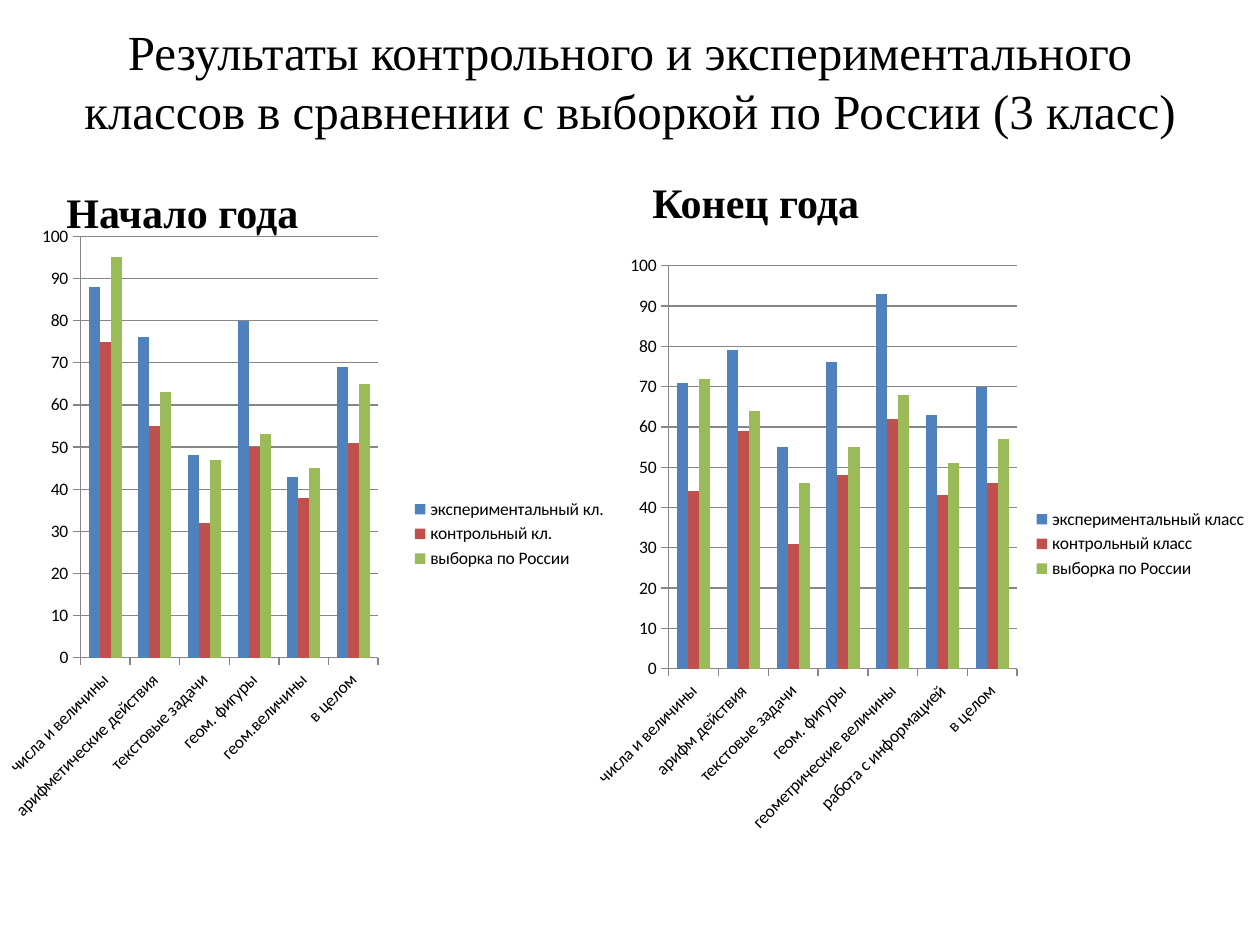
from dataclasses import dataclass

from lxml import etree
from pptx import Presentation
from pptx.chart.data import CategoryChartData
from pptx.dml.color import RGBColor
from pptx.enum.chart import XL_CHART_TYPE, XL_LEGEND_POSITION, XL_TICK_MARK
from pptx.enum.text import MSO_ANCHOR, PP_ALIGN
from pptx.oxml.ns import qn
from pptx.util import Emu, Pt

COLUMNS = XL_CHART_TYPE.COLUMN_CLUSTERED
RIGHT = XL_LEGEND_POSITION.RIGHT
OUTSIDE = XL_TICK_MARK.OUTSIDE
TOP, BOTTOM = MSO_ANCHOR.TOP, MSO_ANCHOR.BOTTOM
LEFT, CENTER = PP_ALIGN.LEFT, PP_ALIGN.CENTER
EMU_PER_PX = 914400 // 126


@dataclass(frozen=True)
class Theme:
    text: str = "000000"
    axis: str = "868686"
    series: tuple = ("4F81BD", "C0504D", "9BBB59")
    text_font: str = "Times New Roman"
    chart_font: str = "Calibri"
    title_size: int = 28
    heading_size: int = 24
    chart_size: int = 10


THEME = Theme()

START_CATEGORIES = ("числа и величины", "арифметические действия", "текстовые задачи",
                    "геом. фигуры", "геом.величины", "в целом")
START_SERIES = {
    "экспериментальный кл.": (88, 76, 48, 80, 43, 69),
    "контрольный кл.": (75, 55, 32, 50, 38, 51),
    "выборка по России": (95, 63, 47, 53, 45, 65),
}
END_CATEGORIES = ("числа и величины", "арифм действия", "текстовые задачи", "геом. фигуры",
                  "геометрические величины", "работа с информацией", "в целом")
END_SERIES = {
    "экспериментальный класс": (71, 79, 55, 76, 93, 63, 70),
    "контрольный класс": (44, 59, 31, 48, 62, 43, 46),
    "выборка по России": (72, 64, 46, 55, 68, 51, 57),
}


def px(*lengths):
    return [Emu(length * EMU_PER_PX) for length in lengths]


def color(value):
    return RGBColor.from_string(value)


def add_text(slide, box, text, *, size, bold=False, align=LEFT, anchor=BOTTOM):
    frame = slide.shapes.add_textbox(*px(*box)).text_frame
    frame.word_wrap = True
    frame.vertical_anchor = anchor
    paragraph = frame.paragraphs[0]
    paragraph.alignment = align
    run = paragraph.add_run()
    run.text = text
    run.font.name = THEME.text_font
    run.font.size = Pt(size)
    run.font.bold = bold
    run.font.color.rgb = color(THEME.text)


def set_plot_layout(chart, x, y, width, height):
    plot_area = chart.plots[0]._element.getparent()
    layout = plot_area.find(qn("c:layout"))
    if layout is None:
        layout = etree.Element(qn("c:layout"))
        plot_area.insert(0, layout)
    manual = etree.SubElement(layout, qn("c:manualLayout"))
    values = {"layoutTarget": "inner", "xMode": "edge", "yMode": "edge",
              "x": x, "y": y, "w": width, "h": height}
    for name, value in values.items():
        etree.SubElement(manual, qn(f"c:{name}"), val=str(value))


def format_axes(chart):
    value_axis = chart.value_axis
    value_axis.minimum_scale, value_axis.maximum_scale = 0, 100
    value_axis.major_unit = 10
    value_axis.has_major_gridlines = True
    for axis in (chart.category_axis, value_axis):
        axis.major_tick_mark = OUTSIDE
        axis.format.line.color.rgb = color(THEME.axis)
    value_axis.major_gridlines.format.line.color.rgb = color(THEME.axis)


def add_column_chart(slide, box, categories, series, plot_layout=None):
    data = CategoryChartData()
    data.categories = categories
    for name, values in series.items():
        data.add_series(name, values)
    chart = slide.shapes.add_chart(COLUMNS, *px(*box), data).chart
    chart.has_title = False
    chart.font.name = THEME.chart_font
    chart.font.size = Pt(THEME.chart_size)
    chart.font.color.rgb = color(THEME.text)
    chart.has_legend = True
    chart.legend.position = RIGHT
    chart.legend.include_in_layout = False
    plot = chart.plots[0]
    plot.vary_by_categories = False
    plot.gap_width = 150
    for column, fill in zip(plot.series, THEME.series):
        column.format.fill.solid()
        column.format.fill.fore_color.rgb = color(fill)
    format_axes(chart)
    if plot_layout:
        set_plot_layout(chart, *plot_layout)


def main():
    presentation = Presentation()
    presentation.slide_width, presentation.slide_height = px(1260, 945)
    slide = presentation.slides.add_slide(presentation.slide_layouts[6])
    add_text(slide, (63, 15, 1134, 157),
             "Результаты контрольного и экспериментального классов "
             "в сравнении с выборкой по России (3 класс)",
             size=THEME.title_size, align=CENTER, anchor=TOP)
    add_text(slide, (54, 155, 557, 88), "Начало года", size=THEME.heading_size, bold=True)
    add_text(slide, (640, 145, 557, 88), "Конец года", size=THEME.heading_size, bold=True)
    add_column_chart(slide, (581, 244, 679, 600), END_CATEGORIES, END_SERIES)
    add_column_chart(slide, (0, 224, 620, 620), START_CATEGORIES, START_SERIES,
                     plot_layout=(0.13, 0.02, 0.48, 0.68))
    presentation.save("out.pptx")


if __name__ == "__main__":
    main()
